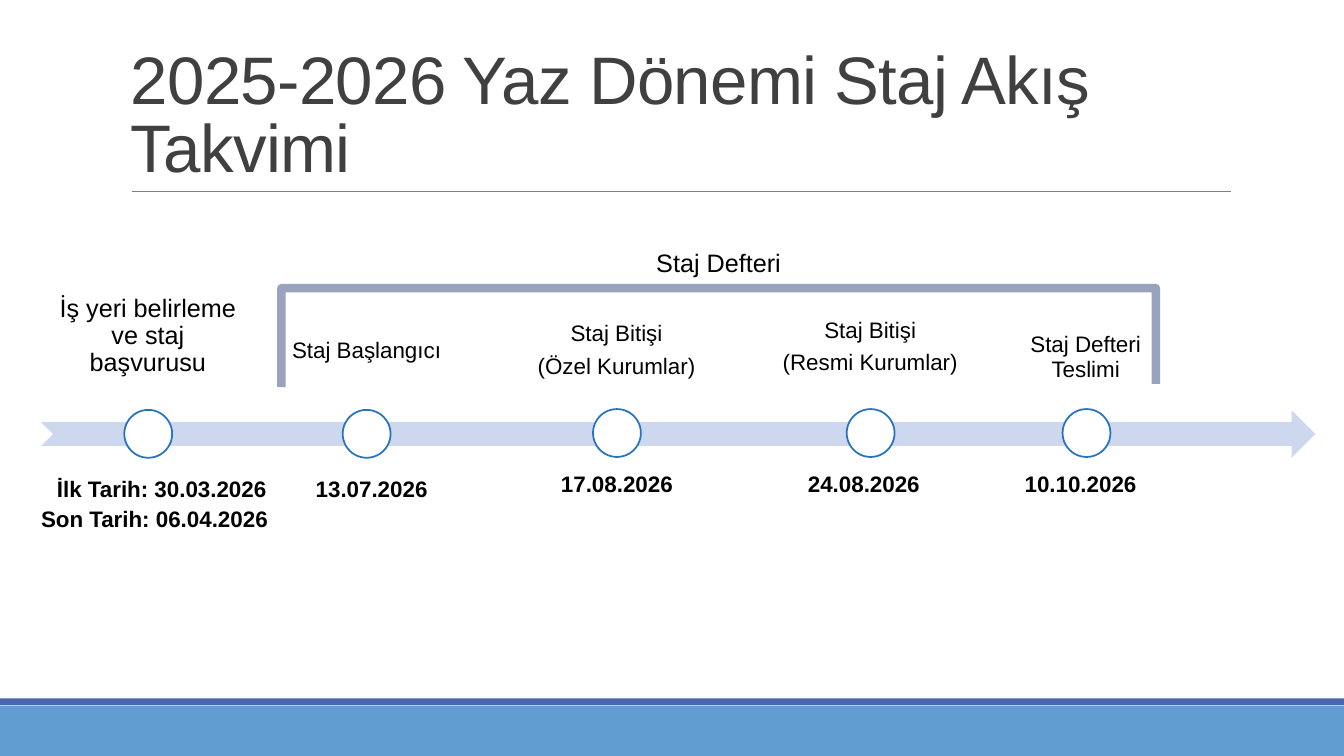
from lxml import etree
from pptx import Presentation
from pptx import util as u
from pptx.dml.color import RGBColor
from pptx.enum import shapes, text
from pptx.oxml.ns import qn

COLORS = {
    "band": "629DD1", "strip": "4A66AC", "rule": "808080", "title": "404040",
    "arrow": "CDD8EF", "ring": "2573C1", "white": "FFFFFF", "ink": "000000",
    "bracket": "34497D",
}
COLS, ROWS = 160, 90
TOP, BOTTOM = text.MSO_ANCHOR.TOP, text.MSO_ANCHOR.BOTTOM
LEFT, CENTER = text.PP_ALIGN.LEFT, text.PP_ALIGN.CENTER
MS = shapes.MSO_SHAPE


class Timeline:
    font = "Arial"

    def __init__(self, prs):
        self.s = prs.slides.add_slide(prs.slide_layouts[6])
        self.col = prs.slide_width / COLS
        self.row = prs.slide_height / ROWS

    def x(self, cols):
        return u.Emu(round(cols * self.col))

    def y(self, rows):
        return u.Emu(round(rows * self.row))

    def box(self, at):
        left, top, width, height = at
        return self.x(left), self.y(top), self.x(width), self.y(height)

    def color(self, name):
        return RGBColor.from_string(COLORS[name])

    def shape(self, kind, at, fill, line=None):
        sp = self.s.shapes.add_shape(kind, *self.box(at))
        sp.shadow.inherit = False
        sp.fill.solid()
        sp.fill.fore_color.rgb = self.color(fill)
        if line:
            sp.line.color.rgb = self.color(line)
            sp.line.width = u.Pt(1.25)
        else:
            sp.line.fill.background()

    def rule(self, left, right, top):
        cx = self.s.shapes.add_connector(
            shapes.MSO_CONNECTOR.STRAIGHT,
            self.x(left), self.y(top), self.x(right), self.y(top))
        etree.SubElement(cx._element.spPr, qn("a:effectLst"))
        cx.line.color.rgb = self.color("rule")
        cx.line.width = u.Pt(0.5)

    def bracket(self, points):
        pts = [(self.x(c), self.y(r)) for c, r in points]
        fb = self.s.shapes.build_freeform(*pts[0])
        fb.add_line_segments(pts[1:], close=False)
        sp = fb.convert_to_shape()
        sp.shadow.inherit = False
        sp.fill.background()
        sp.line.color.rgb = self.color("bracket")
        sp.line.width = u.Pt(6)
        ln = sp.line._ln
        alpha = etree.SubElement(ln.find(".//" + qn("a:srgbClr")), qn("a:alpha"))
        alpha.set("val", "50000")
        etree.SubElement(ln, qn("a:round"))

    def text(self, words, at, size=16, color="ink", bold=False, align=LEFT,
             anchor=TOP, spacing=None, after=0, inset=None, tracking=None):
        tf = self.s.shapes.add_textbox(*self.box(at)).text_frame
        tf.word_wrap = True
        tf.vertical_anchor = anchor
        if inset:
            tf.margin_left = tf.margin_right = self.x(inset)
            tf.margin_top = tf.margin_bottom = self.y(inset)
        tf.text = words
        for p in tf.paragraphs:
            p.alignment = align
            p.line_spacing = spacing
            p.space_after = u.Pt(after)
            for r in p.runs:
                r.font.name = self.font
                r.font.size = u.Pt(size)
                r.font.bold = bold
                r.font.color.rgb = self.color(color)
                if tracking:
                    r.font._element.set("spc", str(tracking))

    def label(self, words, at, anchor, size=16):
        self.text(words, at, size, align=CENTER, anchor=anchor, spacing=0.9,
                  after=round(size * 0.39, 1), inset=size * 0.09)

    def date(self, words, left, top, width=16.7):
        self.text(words, (left, top, width, 4.4), bold=True)


STEPS = [
    ("İş yeri belirleme ve staj başvurusu", (4.9, 30.4, 25.4, 16.1), BOTTOM, 18, 14.8, 48.8),
    ("Staj Başlangıcı", (31.6, 38.9, 24.1, 7.6), TOP, 16, 40.8, 48.8),
    ("Staj Bitişi\n(Özel Kurumlar)", (56.9, 34, 33, 12.6), BOTTOM, 16, 70.6, 48.7),
    ("Staj Bitişi\n(Resmi Kurumlar)", (91.2, 36.5, 24.8, 12.6), TOP, 16, 100.8, 48.7),
    ("Staj Defteri Teslimi", (117.2, 24.2, 24.1, 22.7), BOTTOM, 16, 126.5, 48.7),
]
DATES = [
    ("İlk Tarih: 30.03.2026", 5.6, 56, 29.2),
    ("Son Tarih: 06.04.2026", 3.7, 59.6, 31.4),
    ("13.07.2026", 36.4, 56),
    ("17.08.2026", 65.6, 55.4),
    ("24.08.2026", 95, 55.4),
    ("10.10.2026", 120.8, 55.4),
]


def main():
    prs = Presentation()
    prs.slide_width, prs.slide_height = u.Inches(13.33), u.Inches(7.5)
    t = Timeline(prs)
    t.shape(MS.RECTANGLE, (0, 84, COLS, 6), "band")
    t.shape(MS.RECTANGLE, (0, 83.15, COLS, 0.8), "strip")
    t.rule(15.75, 146.5, 22.8)
    t.text("2025-2026 Yaz Dönemi Staj Akış Takvimi", (14.4, 3.7, 138.1, 19.1),
           48, "title", anchor=BOTTOM, spacing=0.85, tracking=-50)
    t.shape(MS.NOTCHED_RIGHT_ARROW, (4.9, 48.85, 151.7, 5.65), "arrow")
    for words, at, anchor, size, left, top in STEPS:
        t.label(words, at, anchor, size)
        t.shape(MS.OVAL, (left, top, 5.7, 5.7), "white", "ring")
    for entry in DATES:
        t.date(*entry)
    t.bracket([(33.5, 46.1), (33.5, 34.3), (137.6, 34.3), (137.6, 45.7)])
    t.text("Staj Defteri", (71.5, 28.8, 28.1, 4.8), 18, align=CENTER)
    prs.save("out.pptx")


if __name__ == "__main__":
    main()
